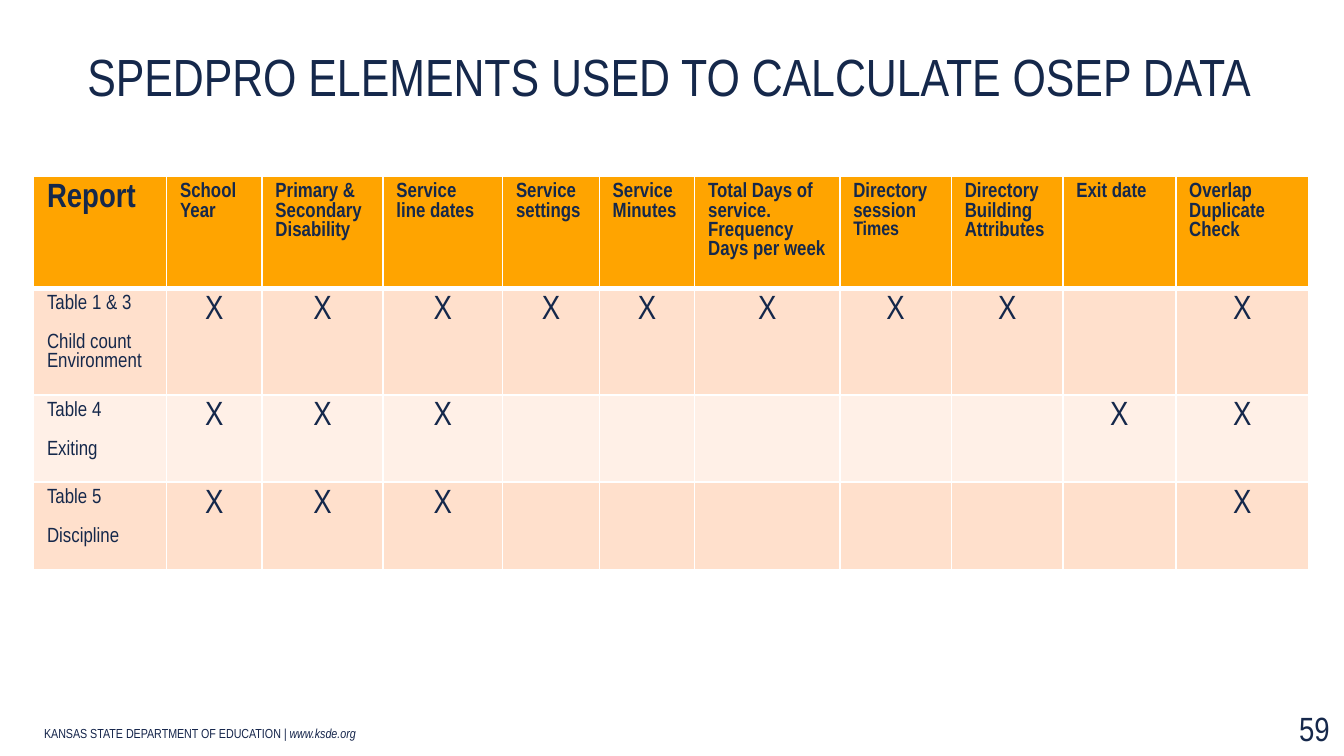
"""Build a slide with a table of the elements behind each OSEP report."""
from lxml.etree import SubElement
from pptx import Presentation
from pptx.dml.color import RGBColor
from pptx.enum.text import MSO_ANCHOR, PP_ALIGN
from pptx.oxml.ns import qn
from pptx.util import Inches, Pt

COLORS = {
    "navy": "15284B",
    "footer": "15254B",
    "header": "FFA400",
    "dark_band": "FFE0CC",
    "light_band": "FFF0E7",
    "border": "FFFFFF",
}


def write(frame, text, size=11, color="navy", bold=False, italic=False,
          align=PP_ALIGN.LEFT, before=0, joined=False):
    para = frame.paragraphs[-1]
    if para.runs and not joined:
        para = frame.add_paragraph()
    para.alignment = align
    if before:
        para.space_before = Pt(before)
    span = para.add_run()
    span.text = text
    span.font.name = "Arial Narrow"
    span.font.size = Pt(size)
    span.font.bold = bold
    span.font.italic = italic
    span.font.color.rgb = RGBColor.from_string(COLORS[color])
    if not joined:
        ending = SubElement(para._p, qn("a:endParaRPr"), sz=str(int(size * 100)))
        SubElement(ending, qn("a:latin"), typeface="Arial Narrow")


def add_box(page, left, top, width, height, anchor):
    box = page.shapes.add_textbox(Inches(left), Inches(top), Inches(width), Inches(height))
    box.text_frame.word_wrap = True
    box.text_frame.vertical_anchor = anchor
    return box.text_frame


deck = Presentation()
deck.slide_width = Inches(10)
deck.slide_height = Inches(10 * 9 / 16)
page = deck.slides.add_slide(deck.slide_layouts[6])

footer = add_box(page, 0.23, 5.34, 4.77, 0.22, MSO_ANCHOR.BOTTOM)
write(footer, "KANSAS STATE DEPARTMENT OF EDUCATION ", size=7, color="footer")
write(footer, "| www.ksde.org", size=7, color="footer", italic=True, joined=True)

title = add_box(page, 0.25, 0.23, 9.5, 0.57, MSO_ANCHOR.BOTTOM)
title.margin_left = Inches(0.4)
title.margin_bottom = 0
write(title, "SPEDPRO ELEMENTS USED TO CALCULATE OSEP DATA", size=28)

columns = [
    (0.99, ["Report"]),
    (0.71, ["School Year"]),
    (0.9, ["Primary & Secondary", "Disability"]),
    (0.89, ["Service line dates"]),
    (0.72, ["Service settings"]),
    (0.71, ["Service Minutes"]),
    (1.08, ["Total Days of service.", "Frequency", "Days per week"]),
    (0.83, ["Directory session", "Times"]),
    (0.83, ["Directory", "Building", "Attributes"]),
    (0.84, ["Exit date"]),
    (0.99, ["Overlap", "Duplicate", "Check"]),
]
reports = [
    (["Table 1 & 3", "Child count", "Environment"], {1, 2, 3, 4, 5, 6, 7, 8, 10}),
    (["Table 4", "Exiting"], {1, 2, 3, 9, 10}),
    (["Table 5", "Discipline"], {1, 2, 3, 10}),
]
row_heights = [0.67, 0.65, 0.65, 0.65]
header_sizes = {"Report": 18, "Times": 10.5}

table = page.shapes.add_table(
    len(row_heights), len(columns), Inches(0.25), Inches(1.31),
    Inches(9.5), Inches(sum(row_heights))).table
for row, height in zip(table.rows, row_heights):
    row.height = Inches(height)
for column, (width, lines) in zip(table.columns, columns):
    column.width = Inches(width)

for row_index, row in enumerate(table.rows):
    if row_index == 0:
        fill = "header"
    else:
        fill = "dark_band" if row_index % 2 else "light_band"
    for column_index, cell in enumerate(row.cells):
        properties = cell._tc.get_or_add_tcPr()
        for side in ("lnL", "lnR", "lnT", "lnB"):
            thick = (row_index, side) in {(0, "lnB"), (1, "lnT")}
            line = SubElement(properties, qn(f"a:{side}"), w=str(Pt(3 if thick else 1)))
            solid = SubElement(line, qn("a:solidFill"))
            SubElement(solid, qn("a:srgbClr"), val=COLORS["border"])
        cell.fill.solid()
        cell.fill.fore_color.rgb = RGBColor.from_string(COLORS[fill])

        if row_index == 0:
            for text in columns[column_index][1]:
                write(cell.text_frame, text, size=header_sizes.get(text, 11), bold=True)
            continue
        label, marked = reports[row_index - 1]
        if column_index == 0:
            for line_index, text in enumerate(label):
                write(cell.text_frame, text, before=10.3 if line_index == 1 else 0)
        elif column_index in marked:
            write(cell.text_frame, "X", size=18, align=PP_ALIGN.CENTER)

page_number = add_box(page, 9.53, 5.22, 0.5, 0.4, MSO_ANCHOR.TOP)
write(page_number, "59", size=18, align=PP_ALIGN.CENTER)

deck.save("out.pptx")
